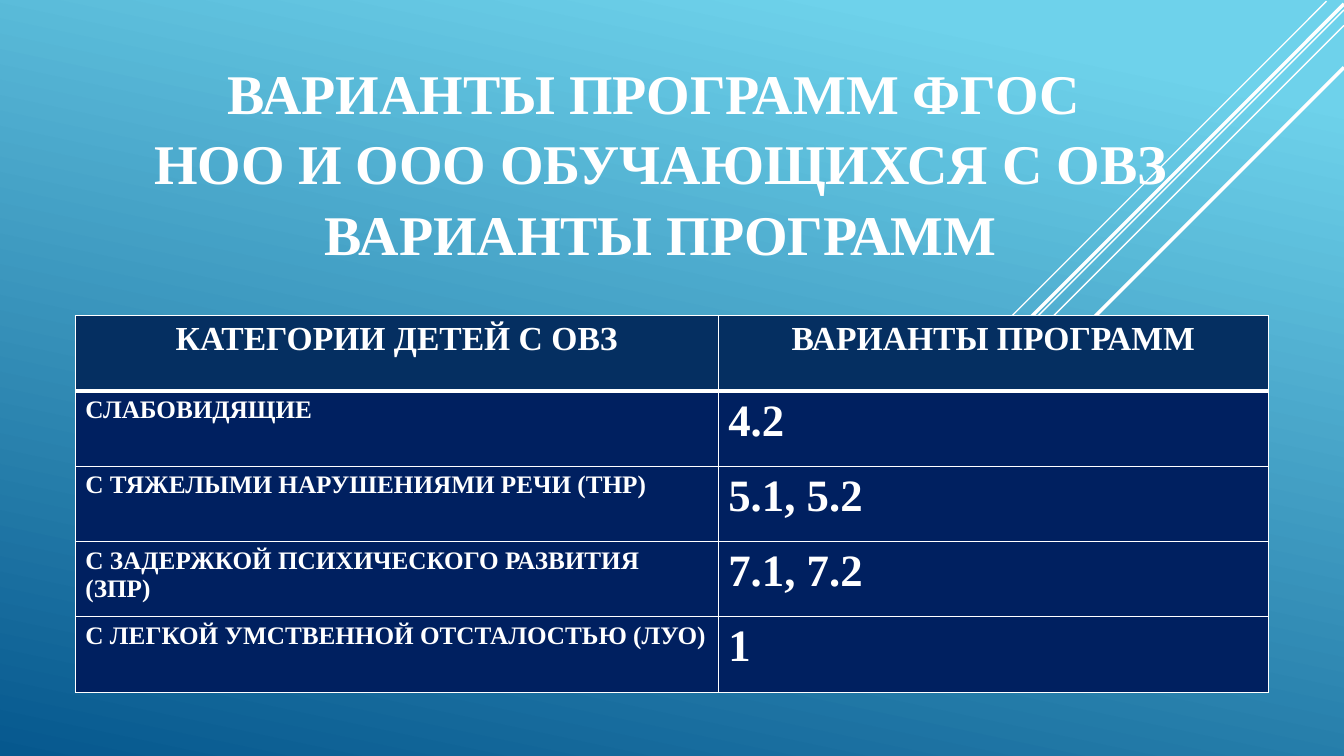
import pptx
import pptx.util
import pptx.dml.color
import pptx.enum.shapes
import pptx.enum.text
import pptx.oxml
import pptx.oxml.ns

Cm = pptx.util.Cm
Pt = pptx.util.Pt
RGBColor = pptx.dml.color.RGBColor
PP_ALIGN = pptx.enum.text.PP_ALIGN

WHITE = RGBColor(0xFF, 0xFF, 0xFF)
SKY = RGBColor(0x6E, 0xD2, 0xEB)
OCEAN = RGBColor(0x06, 0x58, 0x8E)
HEADER_BLUE = RGBColor(0x05, 0x2F, 0x61)
NAVY = RGBColor(0x00, 0x20, 0x60)
FONT = "Times New Roman"


def format_paragraph(p, size, align):
    p.alignment = align
    for r in p.runs:
        r.font.name = FONT
        r.font.size = Pt(size)
        r.font.bold = True
        r.font.color.rgb = WHITE


def set_border(cell, side, width):
    cell._tc.get_or_add_tcPr().append(pptx.oxml.parse_xml(
        f'<a:{side} {pptx.oxml.ns.nsdecls("a")} w="{Pt(width)}">'
        f'<a:solidFill><a:srgbClr val="{WHITE}"/></a:solidFill></a:{side}>'))


prs = pptx.Presentation()
prs.slide_width = Cm(33.87)
prs.slide_height = Cm(19.05)
s = prs.slides.add_slide(prs.slide_layouts[5])

fill = s.background.fill
fill.gradient()
fill.gradient_angle = 258
for stop, color, position in zip(fill.gradient_stops, (SKY, OCEAN), (0.1, 1)):
    stop.color.rgb = color
    stop.position = position

diagonals = [
    (33.43, 0.03, 10.58, 1),
    (33.87, 0.25, 16.9, 1),
    (33.87, 0.64, 13.77, 1),
    (33.87, 0.1, 13.48, 2.5),
    (33.87, 1.7, 12.07, 2.5),
]
for x, y, run, width in diagonals:
    line = s.shapes.add_connector(
        pptx.enum.shapes.MSO_CONNECTOR.STRAIGHT,
        Cm(x), Cm(y), Cm(x - run), Cm(y + run))
    line.line.color.rgb = WHITE
    line.line.width = Pt(width)
    line._element.spPr.append(pptx.oxml.parse_xml(
        f'<a:effectLst {pptx.oxml.ns.nsdecls("a")}/>'))

title = s.shapes.title
title._element.getparent().append(title._element)
title.left, title.top, title.width, title.height = Cm(1.9), Cm(0.43), Cm(29.5), Cm(8.38)
tf = title.text_frame
tf.word_wrap = True
tf.auto_size = pptx.enum.text.MSO_AUTO_SIZE.NONE
tf.vertical_anchor = pptx.enum.text.MSO_ANCHOR.BOTTOM
tf.margin_bottom = Cm(2.1)
p = tf.paragraphs[0]
p.text = "ВАРИАНТЫ ПРОГРАММ ФГОС \nНОО И ООО ОБУЧАЮЩИХСЯ С ОВЗ\nВАРИАНТЫ ПРОГРАММ"
p.line_spacing = 1.05
format_paragraph(p, 40, PP_ALIGN.CENTER)

rows = [
    ("КАТЕГОРИИ ДЕТЕЙ С ОВЗ", "ВАРИАНТЫ ПРОГРАММ"),
    ("СЛАБОВИДЯЩИЕ", "4.2"),
    ("С ТЯЖЕЛЫМИ НАРУШЕНИЯМИ РЕЧИ (ТНР)", "5.1, 5.2"),
    ("С ЗАДЕРЖКОЙ ПСИХИЧЕСКОГО РАЗВИТИЯ (ЗПР)", "7.1, 7.2"),
    ("С ЛЕГКОЙ УМСТВЕННОЙ ОТСТАЛОСТЬЮ (ЛУО)", "1"),
]
table = s.shapes.add_table(
    len(rows), 2, Cm(1.9), Cm(7.96), Cm(30.06), Cm(9.48)).table
for column, width in zip(table.columns, (16.2, 13.86)):
    column.width = Cm(width)
for i, row in enumerate(rows):
    header = i == 0
    for j, text in enumerate(row):
        cell = table.cell(i, j)
        cell.text_frame.text = text
        size = 24 if header else (18, 32)[j]
        align = PP_ALIGN.CENTER if header else PP_ALIGN.LEFT
        format_paragraph(cell.text_frame.paragraphs[0], size, align)
        set_border(cell, "lnL", 1)
        set_border(cell, "lnR", 1)
        set_border(cell, "lnT", 3 if i == 1 else 1)
        set_border(cell, "lnB", 3 if header else 1)
        cell.fill.solid()
        cell.fill.fore_color.rgb = HEADER_BLUE if header else NAVY

prs.save("out.pptx")
